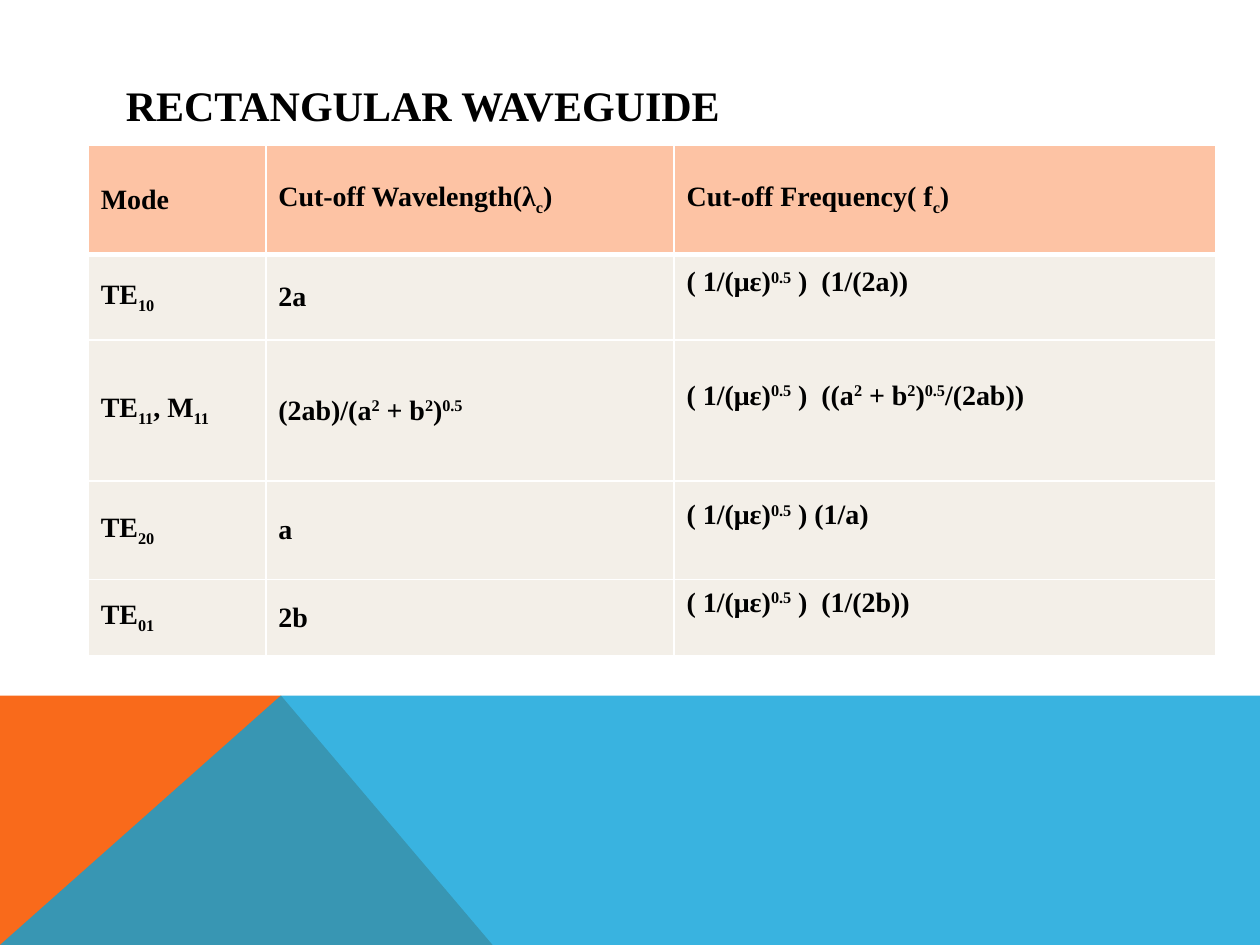
from lxml import etree
from pptx import Presentation
from pptx import util as u
from pptx.dml.color import RGBColor
from pptx.enum import text
from pptx.oxml.ns import qn

W, H = 10, 7.5
BAND_TOP = 5.52
APEX = 2.23
COLS = [1.41, 3.24, 4.3]
ROWS = [0.87, 0.68, 1.12, 0.78, 0.59]
SHIFTS = {"_": "-25000", "^": "30000"}
FONT = {"name": "Times New Roman", "bold": True}
CELLS = [
    ["Mode", "Cut-off Wavelength(λ|_c|)", "Cut-off Frequency( f|_c|)"],
    ["TE|_10", "2a", "( 1/(με)|^0.5| )  (1/(2a))"],
    ["TE|_11|, M|_11", "(2ab)/(a|^2| + b|^2|)|^0.5",
     "( 1/(με)|^0.5| )  ((a|^2| + b|^2|)|^0.5|/(2ab))"],
    ["TE|_20", "a", "( 1/(με)|^0.5| ) (1/a)"],
    ["TE|_01", "2b", "( 1/(με)|^0.5| )  (1/(2b))"],
]


def rgb(value):
    return RGBColor.from_string(value)


def write(tf, markup, size):
    tf.vertical_anchor = text.MSO_ANCHOR.MIDDLE
    tf.word_wrap = True
    p = tf.paragraphs[0]
    for part in markup.split("|"):
        shift = SHIFTS.get(part[0])
        r = p.add_run()
        r.text = part[1:] if shift else part
        for key, value in {**FONT, "size": u.Pt(size)}.items():
            setattr(r.font, key, value)
        r.font.color.rgb = rgb("000000")
        if shift:
            r._r.get_or_add_rPr().set("baseline", shift)


def add_polygon(s, points, color, alpha=None):
    start, *rest = [(u.Inches(x), u.Inches(y)) for x, y in points]
    builder = s.shapes.build_freeform(*start)
    builder.add_line_segments(rest, close=True)
    sp = builder.convert_to_shape()
    sp.shadow.inherit = False
    sp.fill.solid()
    sp.fill.fore_color.rgb = rgb(color)
    sp.line.fill.background()
    if alpha:
        clr = sp._element.spPr.find(qn("a:solidFill"))[0]
        etree.SubElement(clr, qn("a:alpha")).set("val", str(alpha * 1000))


def add_title(s, markup):
    box = [u.Inches(v) for v in (0.9, 0.57, 8.22, 0.52)]
    write(s.shapes.add_textbox(*box).text_frame, markup, 24)


def add_border(cell, side, width):
    ln = etree.SubElement(cell._tc.get_or_add_tcPr(), qn("a:ln" + side))
    ln.set("w", str(u.Pt(width)))
    fill = etree.SubElement(ln, qn("a:solidFill"))
    etree.SubElement(fill, qn("a:srgbClr")).set("val", "FFFFFF")


def format_cell(cell, row, col):
    header = row == 0
    widths = {"L": 1, "R": 1, "T": 3 if row == 1 else 1, "B": 3 if header else 1}
    for side, width in widths.items():
        add_border(cell, side, width)
    cell.fill.solid()
    cell.fill.fore_color.rgb = rgb("FDC3A4" if header else "F3EFE8")
    if col == 2 and not header:
        cell.margin_bottom = u.Inches(0.29)
    write(cell.text_frame, CELLS[row][col], 16)
    cell.vertical_anchor = text.MSO_ANCHOR.MIDDLE


def add_mode_table(s):
    box = [u.Inches(v) for v in (0.7, 1.15, sum(COLS), sum(ROWS))]
    table = s.shapes.add_table(len(ROWS), len(COLS), *box).table
    for column, width in zip(table.columns, COLS):
        column.width = u.Inches(width)
    for i, height in enumerate(ROWS):
        table.rows[i].height = u.Inches(height)
        for j in range(len(COLS)):
            format_cell(table.cell(i, j), i, j)


def main():
    prs = Presentation()
    prs.slide_width, prs.slide_height = u.Inches(W), u.Inches(H)
    s = prs.slides.add_slide(prs.slide_layouts[6])
    add_polygon(s, [(0, H), (0, BAND_TOP), (APEX, BAND_TOP), (3.91, H)], "F96A1B")
    add_polygon(s, [(0, H), (APEX, BAND_TOP), (W, BAND_TOP), (W, H)], "08A1D9", 80)
    add_title(s, "RECTANGULAR WAVEGUIDE")
    add_mode_table(s)
    prs.save("out.pptx")


if __name__ == "__main__":
    main()
